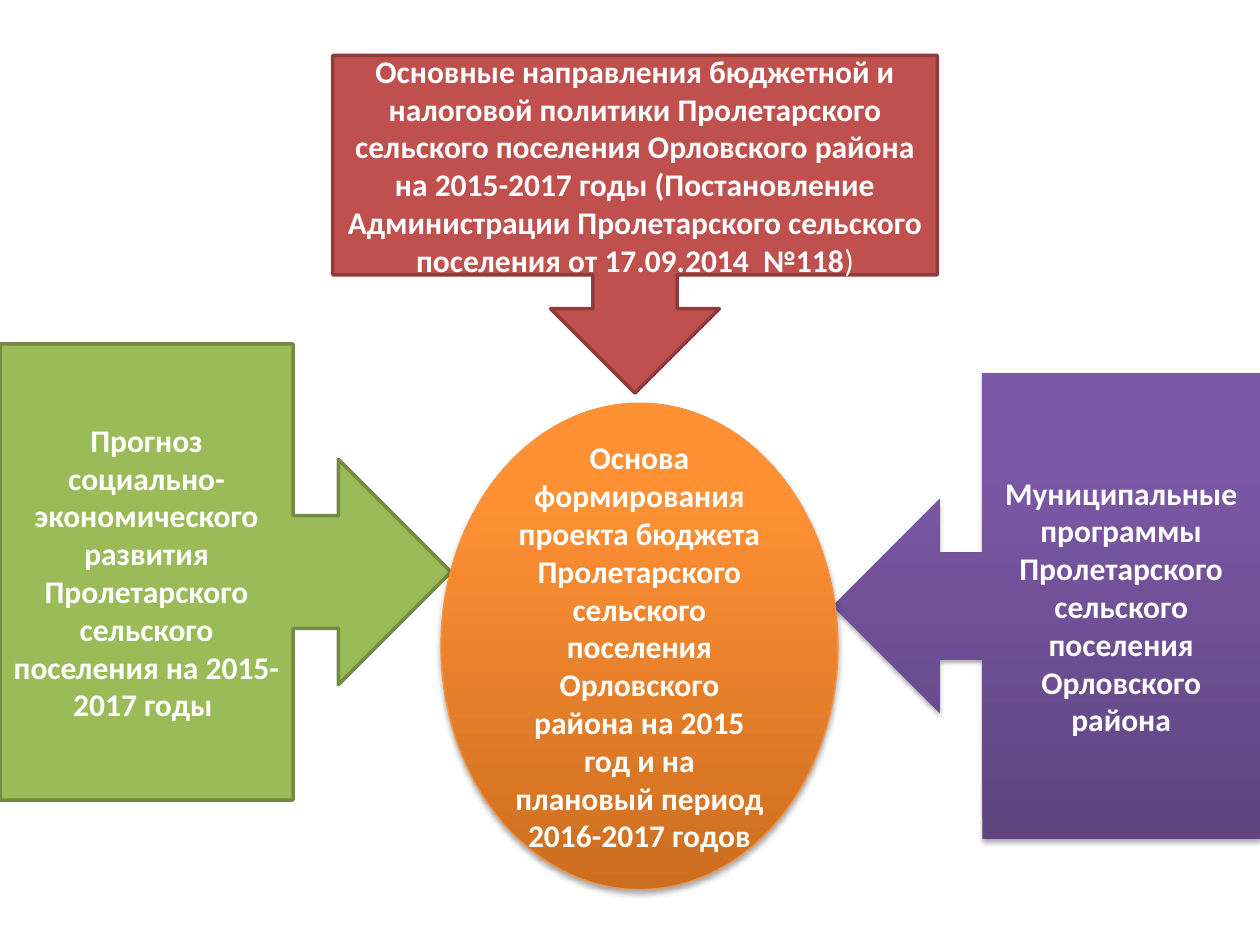
from copy import deepcopy

from lxml.etree import SubElement
from pptx import Presentation
from pptx.dml.color import RGBColor
from pptx.enum.shapes import MSO_SHAPE as Shape
from pptx.enum.text import MSO_ANCHOR as Anchor, PP_ALIGN as Align
from pptx.oxml.ns import qn
from pptx.util import Inches, Pt

WHITE = RGBColor(0xFF, 0xFF, 0xFF)
RED = RGBColor(0xC0, 0x50, 0x4D)
DARK_RED = RGBColor(0x8E, 0x3B, 0x39)
GREEN = RGBColor(0x9B, 0xBB, 0x59)
DARK_GREEN = RGBColor(0x73, 0x8A, 0x42)
ORANGE_EDGE = RGBColor(0xF6, 0x92, 0x40)
PURPLES = (RGBColor(0x5F, 0x44, 0x80), RGBColor(0x7B, 0x58, 0xA6), RGBColor(0x7C, 0x57, 0xA8))
ORANGES = (RGBColor(0xCC, 0x6E, 0x20), RGBColor(0xFF, 0x90, 0x34), RGBColor(0xFF, 0x91, 0x36))
STOPS = (0, 0.8, 1)


class BudgetSlide:
    """Draws the filled blocks of the budget diagram in one text style."""

    font = "Calibri"
    size = Pt(18)

    def __init__(self, slide):
        self.slide = slide

    def block(self, kind, box, runs, line=None, width=2):
        shape = self.slide.shapes.add_shape(kind, *(Inches(value) for value in box))
        shape.shadow.inherit = False
        if line is None:
            shape.line.fill.background()
        else:
            shape.line.color.rgb = line
            shape.line.width = Pt(width)
        frame = shape.text_frame
        frame.word_wrap = True
        frame.vertical_anchor = Anchor.MIDDLE
        paragraph = frame.paragraphs[0]
        paragraph.alignment = Align.CENTER
        for text, bold in runs:
            run = paragraph.add_run()
            run.text = text
            run.font.name = self.font
            run.font.size = self.size
            run.font.bold = bold
            run.font.color.rgb = WHITE
        return shape

    def flat_block(self, kind, box, runs, color, line):
        shape = self.block(kind, box, runs, line)
        shape.fill.solid()
        shape.fill.fore_color.rgb = color

    def glossy_block(self, kind, box, runs, colors, line=None):
        shape = self.block(kind, box, runs, line, 0.75)
        shape.fill.gradient()
        shape.fill.gradient_angle = 90
        properties = shape.element.spPr
        stop_list = properties.find(f".//{qn('a:gsLst')}")
        stop_list.append(deepcopy(stop_list[0]))
        for stop, position, color in zip(shape.fill.gradient_stops, STOPS, colors):
            stop.position = position
            stop.color.rgb = color
        self.add_shadow(properties.find(qn("a:effectLst")))

    def add_shadow(self, effects):
        shadow = SubElement(effects, qn("a:outerShdw"), blurRad=str(Pt(3.1)),
                            dist=str(Pt(1.8)), dir="5400000", rotWithShape="0")
        color = SubElement(shadow, qn("a:srgbClr"), val="000000")
        SubElement(color, qn("a:alpha"), val="35000")


def main():
    presentation = Presentation()
    presentation.slide_width = Inches(10)
    presentation.slide_height = Inches(7.5)
    diagram = BudgetSlide(presentation.slides.add_slide(presentation.slide_layouts[6]))

    diagram.flat_block(
        Shape.DOWN_ARROW_CALLOUT, (2.64, 0.44, 4.8, 2.68),
        [("Основные направления бюджетной и налоговой политики Пролетарского сельского "
          "поселения Орловского района на 2015-2017 годы (Постановление Администрации "
          "Пролетарского сельского поселения от 17.09.2014  №118", True), (")", False)],
        RED, DARK_RED)
    diagram.flat_block(
        Shape.RIGHT_ARROW_CALLOUT, (0, 2.73, 3.58, 3.62),
        [("Прогноз социально-экономического развития Пролетарского сельского "
          "поселения на 2015-2017 годы ", True)],
        GREEN, DARK_GREEN)
    diagram.glossy_block(
        Shape.LEFT_ARROW_CALLOUT, (6.61, 2.96, 3.39, 3.7),
        [("Муниципальные программы Пролетарского сельского поселения "
          "Орловского района", True)],
        PURPLES)
    diagram.glossy_block(
        Shape.OVAL, (3.5, 3.2, 3.15, 3.86),
        [("Основа формирования проекта бюджета Пролетарского сельского поселения "
          "Орловского района на 2015 год и на плановый период 2016-2017 годов", True)],
        ORANGES, ORANGE_EDGE)

    presentation.save("out.pptx")


if __name__ == "__main__":
    main()
